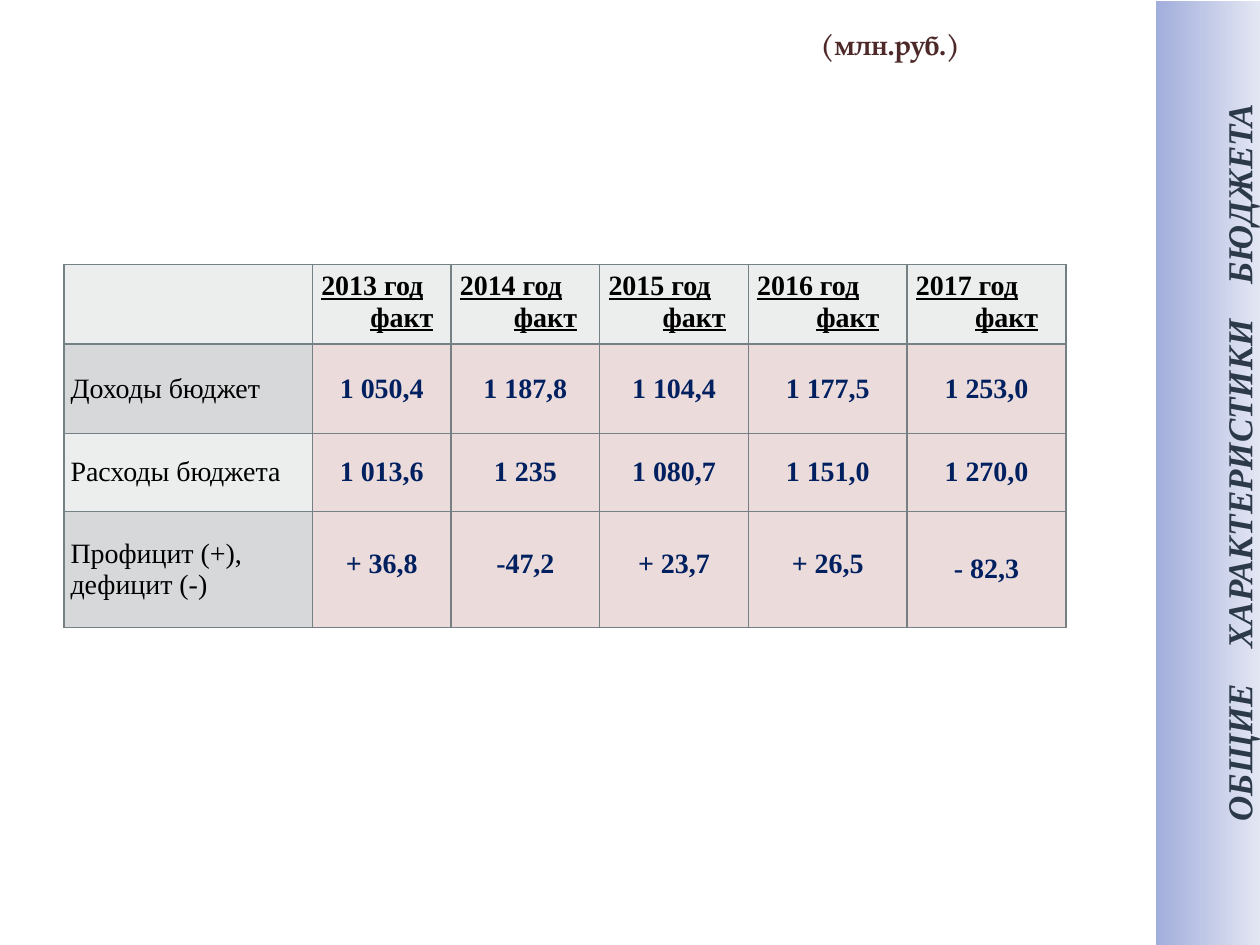
from lxml import etree
from pptx import Presentation
from pptx import util as u
from pptx.dml.color import RGBColor
from pptx.enum import shapes, text
from pptx.oxml import parse_xml
from pptx.oxml.ns import nsdecls, qn

BLACK = RGBColor(0x00, 0x00, 0x00)
NAVY = RGBColor(0x00, 0x20, 0x60)
SLATE = RGBColor(0x2B, 0x39, 0x49)
MAROON = RGBColor(0x4E, 0x29, 0x29)
BORDER = RGBColor(0x75, 0x80, 0x85)
LIGHT = RGBColor(0xEC, 0xED, 0xED)
GREY = RGBColor(0xD6, 0xD8, 0xD9)
PINK = RGBColor(0xEC, 0xDB, 0xDB)
STRIP = RGBColor(0xA2, 0xAE, 0xDC), RGBColor(0xE3, 0xE6, 0xF3)

YEARS = range(2013, 2018)
ROWS = [
    ("Доходы бюджет", "1 050,4", "1 187,8", "1 104,4", "1 177,5", "1 253,0"),
    ("Расходы бюджета", "1 013,6", "1 235", "1 080,7", "1 151,0", "1 270,0"),
    ("Профицит (+), дефицит (-)", "+ 36,8", "-47,2", "+ 23,7", "+ 26,5", "- 82,3"),
]
COLS = (19.7, 11, 11.8, 11.8, 12.6, 12.6)
HEIGHTS = (6.3, 7.1, 6.2, 9.2)
LEFT, CENTER, RIGHT = text.PP_ALIGN.LEFT, text.PP_ALIGN.CENTER, text.PP_ALIGN.RIGHT
MIDDLE, BOTTOM = text.MSO_ANCHOR.MIDDLE, text.MSO_ANCHOR.BOTTOM


class Deck:
    """Budget slide on a grid of 100 columns by 75 rows."""

    serif, display = "Times New Roman", "TeX Gyre Pagella"

    def __init__(self):
        self.prs = Presentation()
        self.prs.slide_width, self.prs.slide_height = u.Inches(10), u.Inches(7.5)
        self.unit = self.prs.slide_width / 100
        self.s = self.prs.slides.add_slide(self.prs.slide_layouts[5])

    def grid(self, *cells):
        return [u.Emu(round(c * self.unit)) for c in cells]

    def style(self, p, size, color, align=CENTER, bold=True, font=serif, **extra):
        p.alignment = align
        for r in p.runs:
            f = r.font
            f.name, f.size, f.bold, f.color.rgb = font, u.Pt(size), bold, color
            for name, value in extra.items():
                setattr(f, name, value)

    def insets(self, box, *sides):
        box.margin_left, box.margin_top, box.margin_right, box.margin_bottom = self.grid(*sides)

    def title(self, words, *at):
        sp = self.s.shapes.title
        sp.left, sp.top, sp.width, sp.height = self.grid(*at)
        tf = sp.text_frame
        tf.text, tf.vertical_anchor = words, MIDDLE
        self.insets(tf, 1, 0, 12.4, 0)
        self.style(tf.paragraphs[0], 16.2, MAROON, RIGHT, font=self.display)

    def side_strip(self, words, gap, *at):
        sp = self.s.shapes.add_shape(shapes.MSO_SHAPE.RECTANGLE, *self.grid(*at))
        sp.rotation, sp.shadow.inherit = 270, False
        sp.line.fill.background()
        sp.fill.gradient()
        sp.fill.gradient_angle = 270
        for stop, color in zip(sp.fill.gradient_stops, STRIP):
            stop.color.rgb = color
        tf = sp.text_frame
        tf.vertical_anchor = BOTTOM
        self.insets(tf, 2.2, 0, 0.5, 0.1)
        p = tf.paragraphs[0]
        for i, word in enumerate(words.split()):
            if i:
                r = p.add_run()
                r.text = " "
                r.font._element.set("spc", str(gap * 100))
            p.add_run().text = word
        self.style(p, 20, SLATE, italic=True)

    def cell(self, cell, words, fill, below=0.5):
        tc = cell._tc.get_or_add_tcPr()
        for side in ("lnL", "lnR", "lnT", "lnB"):
            ln = parse_xml(f'<a:{side} {nsdecls("a")} w="12700"><a:solidFill>'
                           f'<a:srgbClr val="{BORDER}"/></a:solidFill></a:{side}>')
            tc.append(ln)
        cell.fill.solid()
        cell.fill.fore_color.rgb = fill
        cell.text = words
        self.insets(cell, 0.5, 0.5, 0.5, below)
        return cell.text_frame.paragraphs

    def heading(self, cell, year):
        ps = self.cell(cell, f"{year} год\nфакт", LIGHT)
        for p, align, indent in zip(ps, (LEFT, CENTER), (0.2, 3.2)):
            p._p.get_or_add_pPr().set("marL", str(self.grid(indent)[0]))
            self.style(p, 16, BLACK, align, underline=True)

    def table(self, left, top):
        at = self.grid(left, top, sum(COLS), sum(HEIGHTS))
        t = self.s.shapes.add_table(len(HEIGHTS), len(COLS), *at).table
        for col, width in zip(t.columns, self.grid(*COLS)):
            col.width = width
        for row, height in zip(t.rows, self.grid(*HEIGHTS)):
            row.height = height
        self.cell(t.cell(0, 0), "", LIGHT)
        for j, year in enumerate(YEARS, 1):
            self.heading(t.cell(0, j), year)
        for i, row in enumerate(ROWS, 1):
            for j, words in enumerate(row):
                fill = PINK if j else (LIGHT, GREY)[i % 2]
                raised = i == len(ROWS) and 0 < j < len(row) - 1
                c = t.cell(i, j)
                c.vertical_anchor = MIDDLE
                p = self.cell(c, words, fill, 1.3 if raised else 0.5)[0]
                self.style(p, 16, NAVY if j else BLACK, CENTER if j else LEFT, bold=j > 0)


def main():
    d = Deck()
    d.title("(млн.руб.)", 51.6, 1.5, 37, 4)
    d.table(5.1, 21)
    d.side_strip("ОБЩИЕ ХАРАКТЕРИСТИКИ БЮДЖЕТА", 15, 58.4, 33.4, 75, 8.3)
    d.prs.save("out.pptx")


if __name__ == "__main__":
    main()
